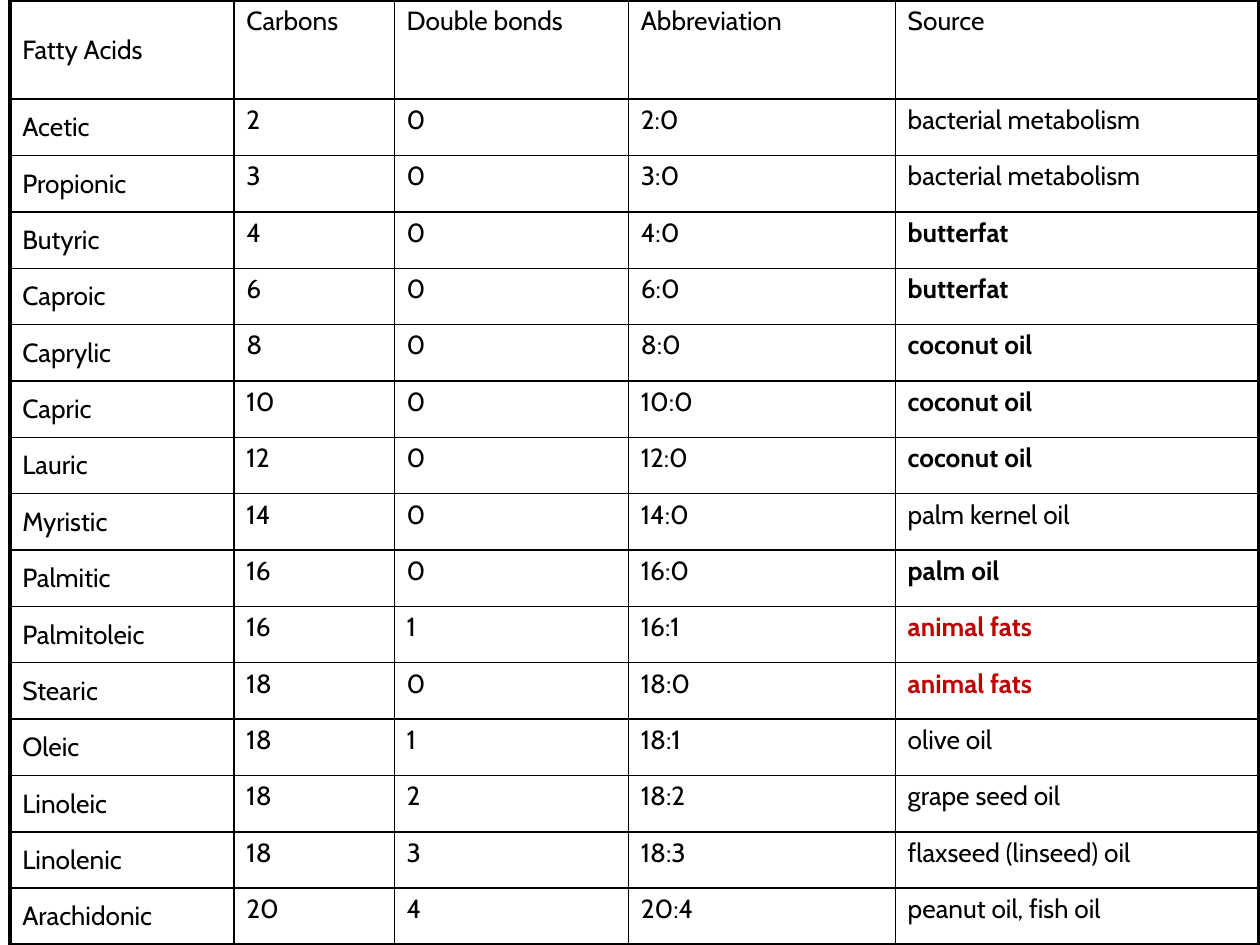
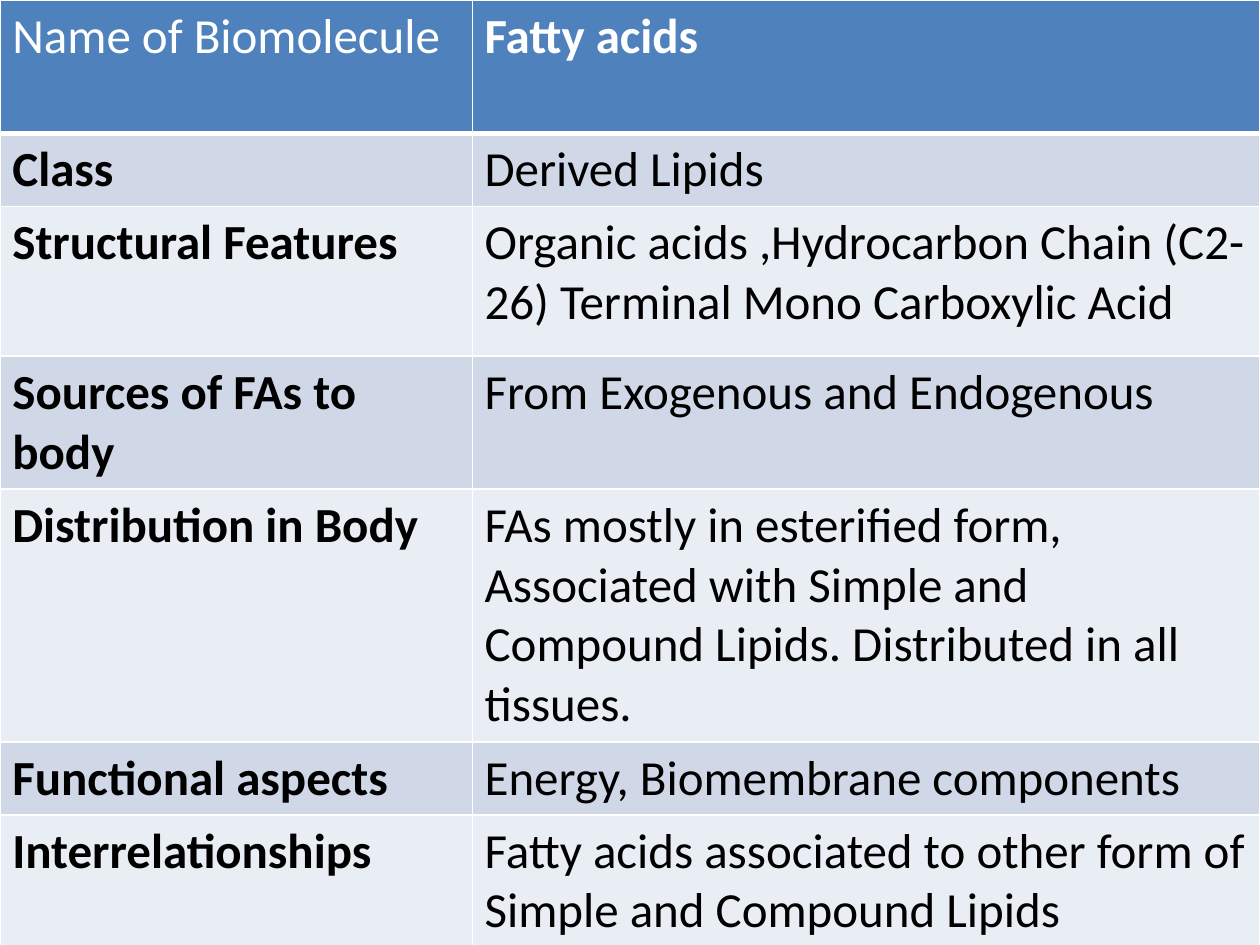
import pptx
import pptx.dml.color
import pptx.enum.text
import pptx.oxml.ns
import pptx.util
from lxml import etree

Cm = pptx.util.Cm
Pt = pptx.util.Pt
Anchor = pptx.enum.text.MSO_ANCHOR

COLORS = {
    "black": "000000", "white": "FFFFFF", "red": "C00000",
    "head": "4F81BD", "dark": "D0D8E8", "light": "E9EDF4",
}
WIDE, HIGH = 25.4, 19.05

HEADS = ["Fatty Acids", "Carbons", "Double bonds", "Abbreviation", "Source"]
ACIDS = [
    ("Acetic", 2, 0, "bacterial metabolism"),
    ("Propionic", 3, 0, "bacterial metabolism"),
    ("Butyric", 4, 0, "butterfat"),
    ("Caproic", 6, 0, "butterfat"),
    ("Caprylic", 8, 0, "coconut oil"),
    ("Capric", 10, 0, "coconut oil"),
    ("Lauric", 12, 0, "coconut oil"),
    ("Myristic", 14, 0, "palm kernel oil"),
    ("Palmitic", 16, 0, "palm oil"),
    ("Palmitoleic", 16, 1, "animal fats"),
    ("Stearic", 18, 0, "animal fats"),
    ("Oleic", 18, 1, "olive oil"),
    ("Linoleic", 18, 2, "grape seed oil"),
    ("Linolenic", 18, 3, "flaxseed (linseed) oil"),
    ("Arachidonic", 20, 4, "peanut oil, fish oil"),
]
BOLD = {"butterfat", "coconut oil", "palm oil", "animal fats"}

FACTS = [
    ("Name of Biomolecule", "Fatty acids", 2.69),
    ("Class", "Derived Lipids", 1.47),
    ("Structural Features",
     "Organic acids ,Hydrocarbon Chain (C2-26) Terminal Mono Carboxylic Acid", 3.02),
    ("Sources of FAs to body", "From Exogenous and Endogenous", 2.68),
    ("Distribution in Body",
     "FAs mostly in esterified form, Associated with Simple and Compound Lipids. "
     "Distributed in all tissues.", 5.1),
    ("Functional aspects", "Energy, Biomembrane components", 1.47),
    ("Interrelationships",
     "Fatty acids associated to other form of Simple and Compound Lipids", 2.79),
]


def add(parent, tag, **attrs):
    return etree.SubElement(parent, pptx.oxml.ns.qn(tag), **attrs)


class Deck:
    def __init__(self):
        self.prs = pptx.Presentation()
        self.prs.slide_width, self.prs.slide_height = Cm(WIDE), Cm(HIGH)

    def page(self, font, size, line):
        self.slide = self.prs.slides.add_slide(self.prs.slide_layouts[6])
        self.font, self.size, self.line = font, size, line

    def table(self, left, cols, rows):
        frame = self.slide.shapes.add_table(
            len(rows), len(cols), Cm(left), Cm(0), Cm(sum(cols)), Cm(sum(rows)))
        grid = frame.table
        grid.first_row = grid.horz_banding = False
        for col, width in zip(grid.columns, cols):
            col.width = Cm(width)
        for row, height in zip(grid.rows, rows):
            row.height = Cm(height)
        return grid

    def text(self, cell, words, color="black", bold=False):
        run = cell.text_frame.paragraphs[0].add_run()
        run.text = words
        run.font.name, run.font.size, run.font.bold = self.font, Pt(self.size), bold
        run.font.color.rgb = pptx.dml.color.RGBColor.from_string(COLORS[color])

    def fill(self, cell, color=None):
        if color is None:
            cell.fill.background()
            return
        cell.fill.solid()
        cell.fill.fore_color.rgb = pptx.dml.color.RGBColor.from_string(COLORS[color])

    def inset(self, cell, side, end):
        cell.margin_left = cell.margin_right = Cm(side)
        cell.margin_top = cell.margin_bottom = Cm(end)

    def space(self, cell, percent):
        props = cell.text_frame.paragraphs[0]._p.get_or_add_pPr()
        add(add(props, "a:spcBef"), "a:spcPct", val=str(percent * 1000))

    def edges(self, cell, left=1, right=1, top=1, bottom=1):
        props = cell._tc.get_or_add_tcPr()
        sides = zip("LRTB", (left, right, top, bottom))
        for spot, (side, width) in enumerate(sides):
            edge = add(props, "a:ln" + side, w=str(Pt(width)))
            add(add(edge, "a:solidFill"), "a:srgbClr", val=COLORS[self.line])
            props.insert(spot, edge)

    def save(self):
        self.prs.save("out.pptx")


def acids(deck):
    deck.page("Cabin", 15, "black")
    data = [HEADS]
    for name, carbons, bonds, source in ACIDS:
        data.append([name, str(carbons), str(bonds), f"{carbons}:{bonds}", source])
    head = 2
    step = (HIGH - head) / len(ACIDS)
    grid = deck.table(0.2, [4.52, 3.23, 4.72, 5.38, 7.32], [head] + [step] * len(ACIDS))
    last, end = len(data) - 1, len(HEADS) - 1
    for r, row in enumerate(data):
        for c, words in enumerate(row):
            cell = grid.cell(r, c)
            deck.fill(cell)
            deck.inset(cell, 0.25, 0.1)
            deck.space(cell, 20)
            deck.text(cell, words, "red" if words == "animal fats" else "black",
                      words in BOLD)
            cell.vertical_anchor = Anchor.MIDDLE if c == 0 else Anchor.TOP
            thick = [2.25 if outer else 1
                     for outer in (c == 0, c == end, r == 0, r == last)]
            deck.edges(cell, *thick)


def facts(deck):
    deck.page("Calibri", 28, "white")
    grid = deck.table(0, [9.52, 15.88], [fact[2] for fact in FACTS])
    for r, (label, value, height) in enumerate(FACTS):
        top = r == 0
        band = "head" if top else "dark" if r % 2 else "light"
        for c, words in enumerate((label, value)):
            cell = grid.cell(r, c)
            deck.fill(cell, band)
            deck.inset(cell, 0.25, 0.13)
            deck.text(cell, words, "white" if top else "black", (c == 0) != top)
            deck.edges(cell, top=3 if r == 1 else 1, bottom=3 if top else 1)


def main():
    deck = Deck()
    acids(deck)
    facts(deck)
    deck.save()


if __name__ == "__main__":
    main()
